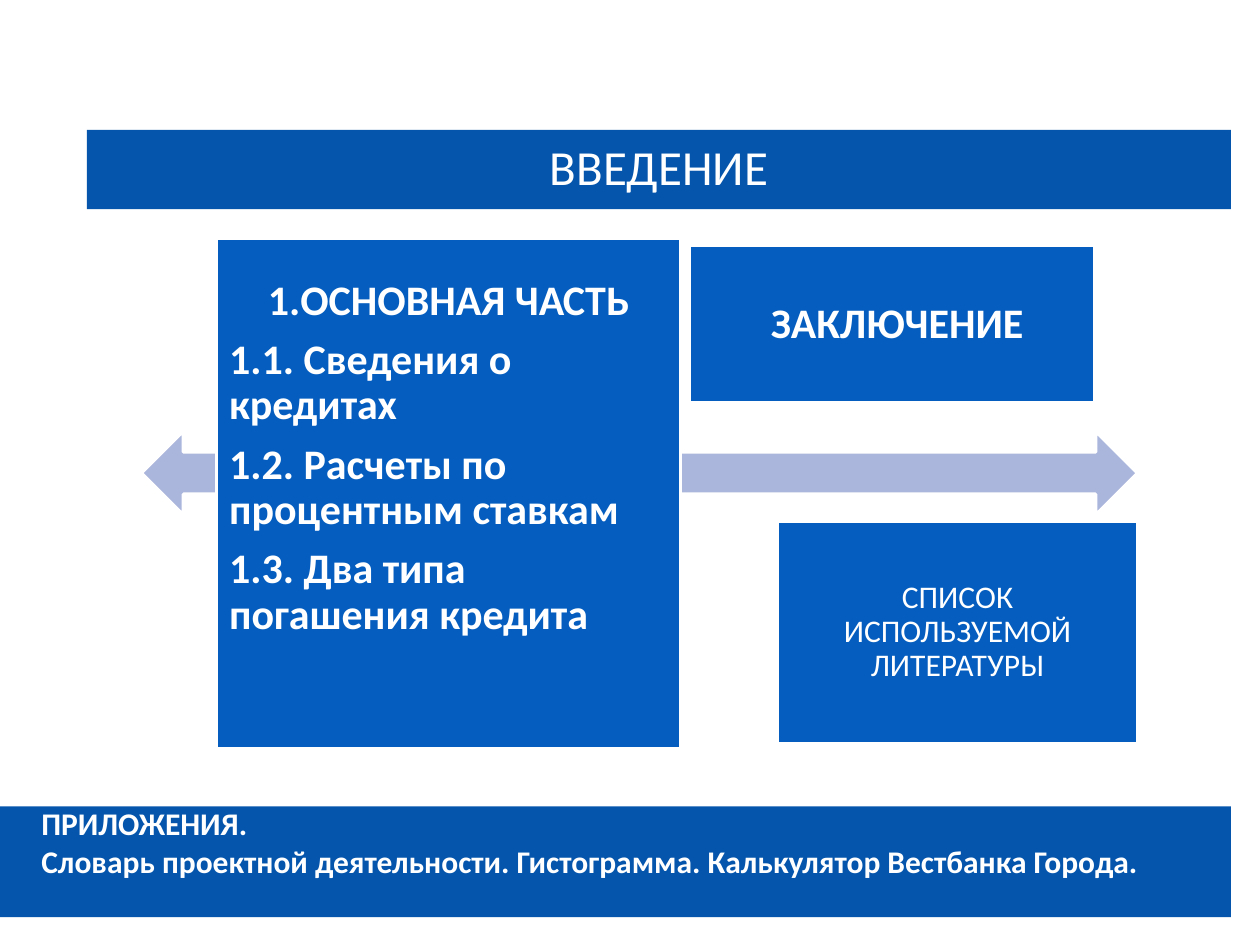
from pptx import Presentation
from pptx.dml.color import RGBColor
from pptx.enum.shapes import MSO_SHAPE
from pptx.enum.text import MSO_ANCHOR, MSO_AUTO_SIZE, PP_ALIGN
from pptx.util import Inches, Pt

BAR, BOX, ARROW, WHITE = "0555AD", "055EBF", "ABB6DC", "FFFFFF"


def paint(sp, fill, line=None):
    sp.fill.solid()
    sp.fill.fore_color.rgb = RGBColor.from_string(fill)
    if line:
        sp.line.color.rgb = RGBColor.from_string(line)
        sp.line.width = Pt(2)
    else:
        sp.line.fill.background()


def write(sp, lines, size, bold, insets, anchor=MSO_ANCHOR.MIDDLE, spacing=0.9, after=8):
    """Fill a shape with (text, alignment) lines; insets are left, top, right, bottom."""
    tf = sp.text_frame
    frame = dict(zip(("margin_left", "margin_top", "margin_right", "margin_bottom"),
                     map(Inches, insets)))
    frame.update(word_wrap=True, auto_size=MSO_AUTO_SIZE.NONE, vertical_anchor=anchor)
    for name, value in frame.items():
        setattr(tf, name, value)
    for i, (text, align) in enumerate(lines):
        p = tf.add_paragraph() if i else tf.paragraphs[0]
        p.alignment, p.line_spacing = align, spacing
        p.space_before, p.space_after = Pt(0), Pt(after)
        r = p.add_run()
        r.text = text
        for name, value in {"name": "Calibri", "size": Pt(size), "bold": bold}.items():
            setattr(r.font, name, value)
        r.font.color.rgb = RGBColor.from_string(WHITE)


prs = Presentation()
prs.slide_width, prs.slide_height = Inches(10), Inches(7.5)
s = prs.slides.add_slide(prs.slide_layouts[5])
C, L = PP_ALIGN.CENTER, PP_ALIGN.LEFT

# Introduction bar
title = s.shapes.title
title.left, title.top, title.width, title.height = map(Inches, (0.69, 1.03, 9.08, 0.63))
paint(title, BAR)
write(title, [("ВВЕДЕНИЕ", C)], 28, False, [0.12] * 4)

# Arrow behind the sections
arrow = s.shapes.add_shape(MSO_SHAPE.LEFT_RIGHT_ARROW, *map(Inches, (1.12, 3.42, 7.91, 0.67)))
arrow.shadow.inherit = False
paint(arrow, ARROW, WHITE)

# Sections: place, lines, size, bold, insets
sections = [
    ((1.72, 1.89, 3.68, 4.05),
     [("1.ОСНОВНАЯ ЧАСТЬ", C),
      ("1.1. Сведения о кредитах", L),
      ("1.2. Расчеты по процентным ставкам", L),
      ("1.3. Два типа погашения кредита", L)],
     24, True, (0.1, 0.1, 0.1, 0.65)),
    ((5.47, 1.95, 3.22, 1.25), [("ЗАКЛЮЧЕНИЕ", C)], 24, True, (0.18, 0.1, 0.1, 0.1)),
    ((6.17, 4.14, 2.86, 1.76), [("СПИСОК ИСПОЛЬЗУЕМОЙ ЛИТЕРАТУРЫ", C)],
     18, False, [0.07] * 4),
]
for place, lines, size, bold, insets in sections:
    sp = s.shapes.add_shape(MSO_SHAPE.RECTANGLE, *map(Inches, place))
    sp.shadow.inherit = False
    paint(sp, BOX, WHITE)
    write(sp, lines, size, bold, insets)

# Appendix bar with its caption
bar = s.shapes.add_shape(MSO_SHAPE.RECTANGLE, *map(Inches, (0, 6.4, 9.77, 0.88)))
bar.shadow.inherit = False
paint(bar, BAR)
caption = s.shapes.add_textbox(*map(Inches, (0.23, 6.33, 9.77, 0.71)))
write(caption,
      [("ПРИЛОЖЕНИЯ.", L),
       ("Словарь проектной деятельности. Гистограмма. Калькулятор Вестбанка Города.", L)],
      18, True, (0.1, 0.05, 0.1, 0.05), MSO_ANCHOR.TOP, 1.0, 0)

prs.save("out.pptx")
